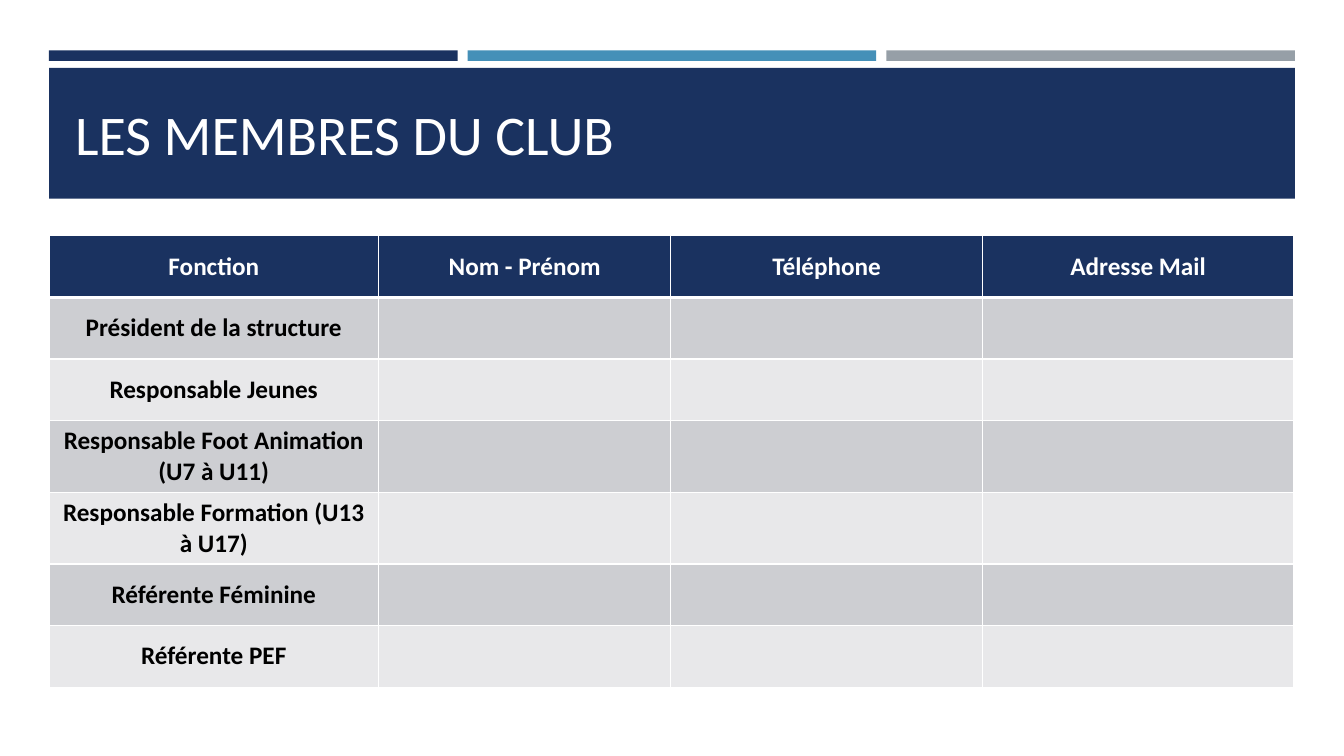
from lxml.etree import SubElement
from pptx import Presentation
from pptx.dml.color import RGBColor
from pptx.enum.shapes import MSO_SHAPE
from pptx.enum.text import MSO_ANCHOR, MSO_AUTO_SIZE, PP_ALIGN
from pptx.oxml.ns import qn
from pptx.util import Pt

NAVY = RGBColor(0x1A, 0x32, 0x60)
BLUE = RGBColor(0x45, 0x90, 0xB8)
GREY = RGBColor(0x96, 0x9F, 0xA7)
DARK = RGBColor(0xCD, 0xCE, 0xD2)
LIGHT = RGBColor(0xE8, 0xE8, 0xEA)
WHITE = RGBColor(0xFF, 0xFF, 0xFF)
BLACK = RGBColor(0, 0, 0)
FONT = "Calibri"

HEADS = ["Fonction", "Nom - Prénom", "Téléphone", "Adresse Mail"]
ROLES = [
    "Président de la structure",
    "Responsable Jeunes",
    "Responsable Foot Animation (U7 à U11)",
    "Responsable Formation (U13 à U17)",
    "Référente Féminine",
    "Référente PEF",
]
WIDTHS = [235.4, 208.8, 222.5, 222.5]
HEIGHTS = [44, 44, 44, 51, 51, 44, 44]


def style(para, size, color, bold):
    for run in para.runs:
        font = run.font
        font.name, font.size, font.bold = FONT, Pt(size), bold
        font.color.rgb = color


def add_bar(slide, left, top, width, height, color):
    bar = slide.shapes.add_shape(
        MSO_SHAPE.RECTANGLE, Pt(left), Pt(top), Pt(width), Pt(height))
    bar.shadow.inherit = False
    bar.fill.solid()
    bar.fill.fore_color.rgb = color
    bar.line.fill.background()


def add_strips(slide, left, top, width, height):
    gap = 7.2
    part = (width - 2 * gap) / 3
    for index, color in enumerate([NAVY, BLUE, GREY]):
        add_bar(slide, left + index * (part + gap), top, part, height, color)


def add_title(slide, left, top, width, height):
    add_bar(slide, left, top, width, height, NAVY)
    title = slide.shapes.title
    title.left, title.top = Pt(left + 11.4), Pt(top + 7)
    title.width, title.height = Pt(width - 22.8), Pt(height - 14)
    frame = title.text_frame
    frame.text = "LES MEMBRES DU CLUB"
    frame.word_wrap = True
    frame.auto_size = MSO_AUTO_SIZE.NONE
    frame.vertical_anchor = MSO_ANCHOR.MIDDLE
    para = frame.paragraphs[0]
    para.alignment = PP_ALIGN.LEFT
    style(para, 40, WHITE, False)
    title.element.getparent().append(title.element)


def add_edges(cell, top, bottom):
    props = cell.fill.fore_color and cell._tc.get_or_add_tcPr()
    edges = [("a:lnL", 1), ("a:lnR", 1), ("a:lnT", top), ("a:lnB", bottom)]
    for index, (name, size) in enumerate(edges):
        line = SubElement(props, qn(name), w=str(Pt(size)))
        fill = SubElement(line, qn("a:solidFill"))
        SubElement(fill, qn("a:srgbClr"), val=str(WHITE))
        props.insert(index, line)


def fill_cell(cell, text, row):
    cell.fill.solid()
    cell.fill.fore_color.rgb = NAVY if row == 0 else DARK if row % 2 else LIGHT
    add_edges(cell, 3 if row == 1 else 1, 3 if row == 0 else 1)
    cell.vertical_anchor = MSO_ANCHOR.MIDDLE
    if text:
        cell.text_frame.text = text
        para = cell.text_frame.paragraphs[0]
        para.alignment = PP_ALIGN.CENTER
        style(para, 18, BLACK if row else WHITE, True)


def add_members(slide, left, top):
    rows = [HEADS] + [[role, "", "", ""] for role in ROLES]
    table = slide.shapes.add_table(
        len(rows), len(HEADS), Pt(left), Pt(top),
        Pt(sum(WIDTHS)), Pt(sum(HEIGHTS))).table
    for column, width in zip(table.columns, WIDTHS):
        column.width = Pt(width)
    for row, texts in enumerate(rows):
        table.rows[row].height = Pt(HEIGHTS[row])
        for col, text in enumerate(texts):
            fill_cell(table.cell(row, col), text, row)


def main():
    deck = Presentation()
    deck.slide_width, deck.slide_height = Pt(960), Pt(540)
    slide = deck.slides.add_slide(deck.slide_layouts[5])
    add_strips(slide, 35, 36, 890, 7.5)
    add_title(slide, 35, 48.5, 890, 93.5)
    add_members(slide, 35, 168.5)
    deck.save("out.pptx")


if __name__ == "__main__":
    main()
